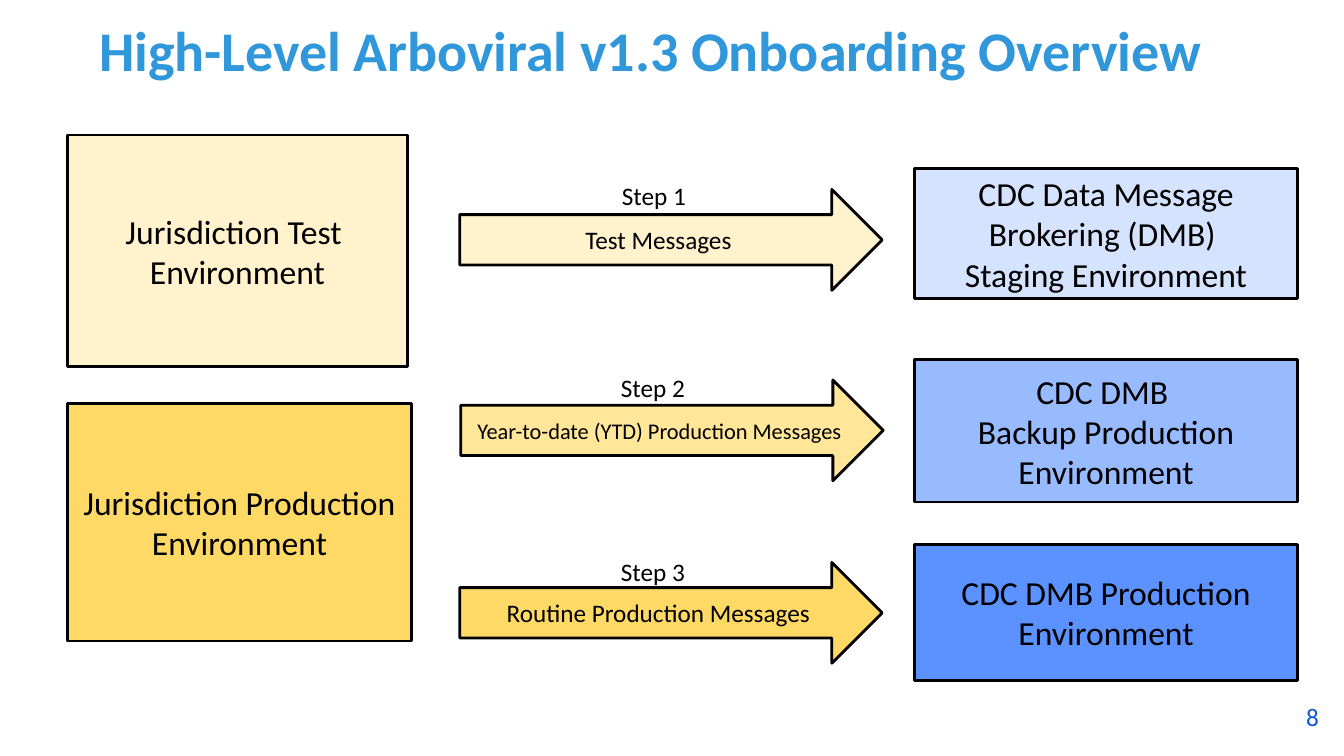
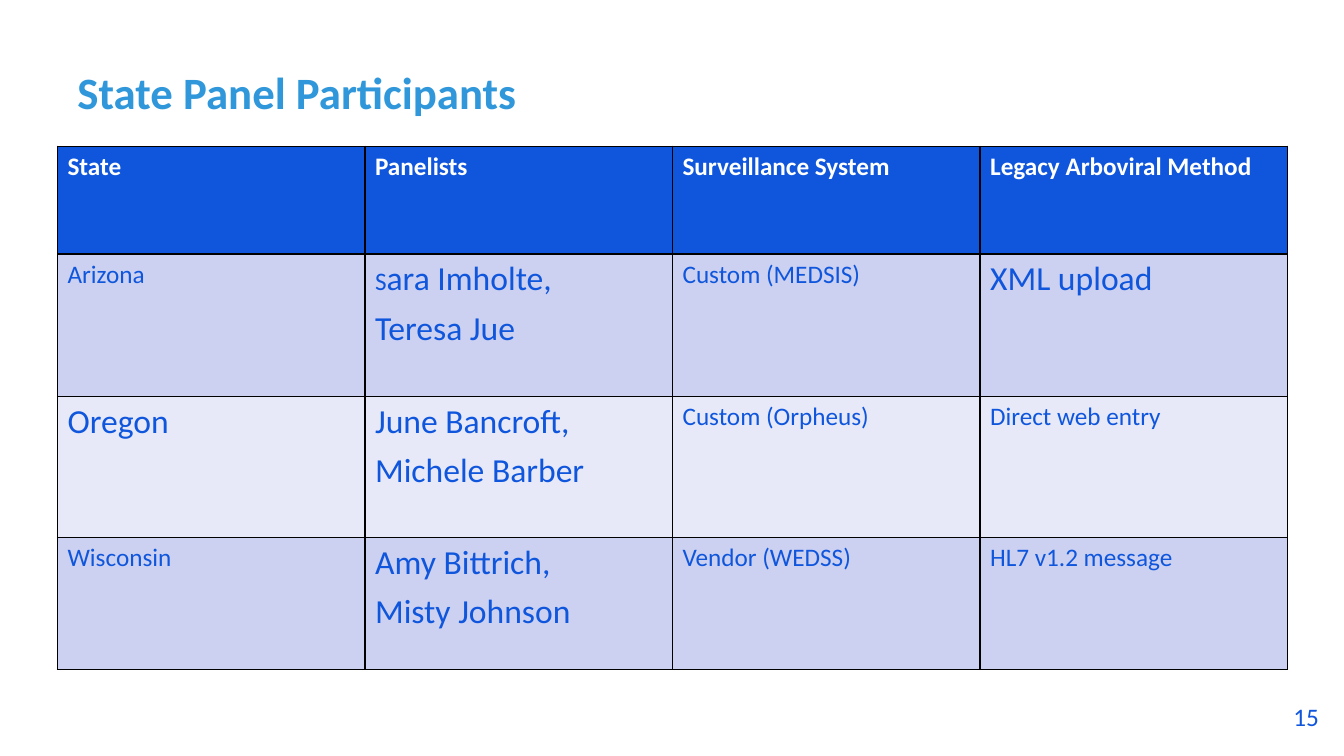
from dataclasses import dataclass

import pptx
import pptx.dml.color
import pptx.enum.shapes
import pptx.enum.text
import pptx.oxml
import pptx.oxml.ns
import pptx.util
from pptx.util import Inches

Align = pptx.enum.text.PP_ALIGN
Anchor = pptx.enum.text.MSO_ANCHOR
Preset = pptx.enum.shapes.MSO_SHAPE


@dataclass(frozen=True)
class Theme:
    font: str = "Calibri"
    title: str = "2F97DA"
    accent: str = "0F56DC"
    ink: str = "000000"
    white: str = "FFFFFF"
    test: str = "FFF2CC"
    year_to_date: str = "FFE699"
    production: str = "FFD966"
    staging_target: str = "D6E3FF"
    backup_target: str = "98BAFF"
    production_target: str = "5B92FF"
    odd_row: str = "CCD1F2"
    even_row: str = "E7E9F9"
    title_size: int = 40
    small_title_size: int = 32
    large: int = 24
    normal: int = 18
    compact: int = 16
    outline: int = 2


THEME = Theme()


@dataclass(frozen=True)
class Box:
    left: float
    top: float
    width: float
    height: float

    def lengths(self) -> tuple:
        return tuple(Inches(v) for v in (self.left, self.top, self.width, self.height))


@dataclass(frozen=True)
class Block:
    lines: tuple
    box: Box
    fill: str
    preset: int = Preset.RECTANGLE
    size: int = THEME.large


@dataclass(frozen=True)
class Step:
    label_box: Box
    arrow: Block
    target: Block


@dataclass(frozen=True)
class Cell:
    lines: tuple
    size: int = THEME.normal
    small_initial: bool = False


# Text helpers
def color(value: str):
    return pptx.dml.color.RGBColor.from_string(value)


def style(paragraph, size: int, ink: str, bold: bool = False, align=Align.LEFT) -> None:
    paragraph.alignment = align
    font = paragraph.font
    font.name, font.size, font.bold = THEME.font, pptx.util.Pt(size), bold
    font.color.rgb = color(ink)


def fill_paragraphs(frame, lines: tuple, size: int, ink: str, bold: bool = False,
                    align=Align.LEFT, gap: int = 0) -> None:
    for index, line in enumerate(lines):
        paragraph = frame.add_paragraph() if index else frame.paragraphs[0]
        paragraph.add_run().text = line
        style(paragraph, size, ink, bold, align)
        if index and gap:
            paragraph.space_before = pptx.util.Pt(gap)


def add_text(slide, text: str, box: Box, size: int, ink: str, bold: bool = False,
             align=Align.LEFT, anchor=Anchor.TOP, wrap: bool = True):
    frame = slide.shapes.add_textbox(*box.lengths()).text_frame
    frame.word_wrap, frame.vertical_anchor = wrap, anchor
    fill_paragraphs(frame, (text,), size, ink, bold, align)
    return frame.paragraphs[0]


# Shared slide frame: title and page number
def add_slide(presentation, title: str, box: Box, size: int, align, number: int):
    slide = presentation.slides.add_slide(presentation.slide_layouts[6])
    add_text(slide, str(number), Box(11.92, 6.91, 1.26, 0.4), THEME.normal,
             THEME.accent, align=Align.RIGHT)
    heading = add_text(slide, title, box, size, THEME.title, True, align, Anchor.BOTTOM)
    heading.line_spacing = pptx.util.Pt(40)
    return slide


# Flow diagram
def add_block(slide, block: Block) -> None:
    shape = slide.shapes.add_shape(block.preset, *block.box.lengths())
    shape.shadow.inherit = False
    shape.fill.solid()
    shape.fill.fore_color.rgb = color(block.fill)
    shape.line.color.rgb = color(THEME.ink)
    shape.line.width = pptx.util.Pt(THEME.outline)
    frame = shape.text_frame
    frame.word_wrap, frame.vertical_anchor = True, Anchor.MIDDLE
    fill_paragraphs(frame, block.lines, block.size, THEME.ink, align=Align.CENTER)


def arrow(text: str, left: float, top: float, fill: str, size: int = THEME.normal) -> Block:
    return Block((text,), Box(left, top, 4.19, 1), fill, Preset.RIGHT_ARROW, size)


def target(lines: tuple, top: float, height: float, fill: str) -> Block:
    return Block(lines, Box(9.07, top, 3.8, height), fill)


SOURCES = (
    Block(("Jurisdiction Test ", "Environment"), Box(0.67, 1.34, 3.37, 2.3), THEME.test),
    Block(("Jurisdiction Production Environment",), Box(0.67, 4, 3.41, 2.36),
          THEME.production),
)
STEPS = (
    Step(Box(6.07, 1.74, 0.9, 0.4),
         arrow("Test Messages", 4.56, 1.88, THEME.test),
         target(("CDC Data Message Brokering (DMB) ", "Staging Environment"),
                1.67, 1.29, THEME.staging_target)),
    Step(Box(6.06, 3.64, 0.85, 0.4),
         arrow("Year-to-date (YTD) Production Messages", 4.57, 3.77,
               THEME.year_to_date, THEME.compact),
         target(("CDC DMB ", "Backup Production Environment"),
                3.57, 1.41, THEME.backup_target)),
    Step(Box(6.06, 5.47, 0.88, 0.4),
         arrow("Routine Production Messages", 4.56, 5.58, THEME.production),
         target(("CDC DMB Production", "Environment"),
                5.4, 1.35, THEME.production_target)),
)


def build_overview(presentation) -> None:
    slide = add_slide(presentation, "High-Level Arboviral v1.3 Onboarding Overview",
                      Box(0.45, 0.09, 12, 0.78), THEME.title_size, Align.CENTER, 8)
    for source in SOURCES:
        add_block(slide, source)
    for number, step in enumerate(STEPS, 1):
        add_block(slide, step.arrow)
        add_block(slide, step.target)
        add_text(slide, f"Step {number}", step.label_box, THEME.normal, THEME.ink,
                 wrap=False)


# Participants table
HEADERS = ("State", "Panelists", "Surveillance System", "Legacy Arboviral Method")
PARTICIPANTS = (
    (Cell(("Arizona",)), Cell(("Sara Imholte,", "Teresa Jue"), THEME.large, True),
     Cell(("Custom (MEDSIS)",)), Cell(("XML upload",), THEME.large)),
    (Cell(("Oregon",), THEME.large),
     Cell(("June Bancroft,", "Michele Barber"), THEME.large),
     Cell(("Custom (Orpheus)",)), Cell(("Direct web entry",))),
    (Cell(("Wisconsin",)), Cell(("Amy Bittrich,", "Misty Johnson"), THEME.large),
     Cell(("Vendor (WEDSS)",)), Cell(("HL7 v1.2 message",))),
)
ROW_HEIGHTS = (1.07, 1.41, 1.4, 1.31)
COLUMN_WIDTH = 3.05


def add_borders(cell) -> None:
    properties = cell._tc.get_or_add_tcPr()
    for index, side in enumerate(("lnL", "lnR", "lnT", "lnB")):
        properties.insert(index, pptx.oxml.parse_xml(
            f'<a:{side} {pptx.oxml.ns.nsdecls("a")} w="12700"><a:solidFill>'
            f'<a:srgbClr val="{THEME.ink}"/></a:solidFill></a:{side}>'))


def fill_cell(cell, content: Cell, fill: str, ink: str, bold: bool) -> None:
    cell.fill.solid()
    cell.fill.fore_color.rgb = color(fill)
    add_borders(cell)
    fill_paragraphs(cell.text_frame, content.lines, content.size, ink, bold, gap=6)
    if content.small_initial:
        paragraph = cell.text_frame.paragraphs[0]
        initial = paragraph.runs[0]
        paragraph.add_run().text = initial.text[1:]
        initial.text = initial.text[0]
        initial.font.size = pptx.util.Pt(THEME.normal)


def build_participants(presentation) -> None:
    slide = add_slide(presentation, "State Panel Participants", Box(0.67, 0.3, 12, 0.92),
                      THEME.small_title_size, Align.LEFT, 15)
    rows = (tuple(Cell((header,)) for header in HEADERS),) + PARTICIPANTS
    box = Box(0.57, 1.45, COLUMN_WIDTH * len(HEADERS), sum(ROW_HEIGHTS))
    table = slide.shapes.add_table(len(rows), len(HEADERS), *box.lengths()).table
    for column in table.columns:
        column.width = Inches(COLUMN_WIDTH)
    for row_index, (row, height) in enumerate(zip(rows, ROW_HEIGHTS)):
        table.rows[row_index].height = Inches(height)
        is_header = row_index == 0
        band = THEME.odd_row if row_index % 2 else THEME.even_row
        for column_index, content in enumerate(row):
            fill_cell(table.cell(row_index, column_index), content,
                      THEME.accent if is_header else band,
                      THEME.white if is_header else THEME.accent, is_header)


def main() -> None:
    presentation = pptx.Presentation()
    presentation.slide_width = Inches(13.33)
    presentation.slide_height = Inches(7.5)
    build_overview(presentation)
    build_participants(presentation)
    presentation.save("out.pptx")


if __name__ == "__main__":
    main()
